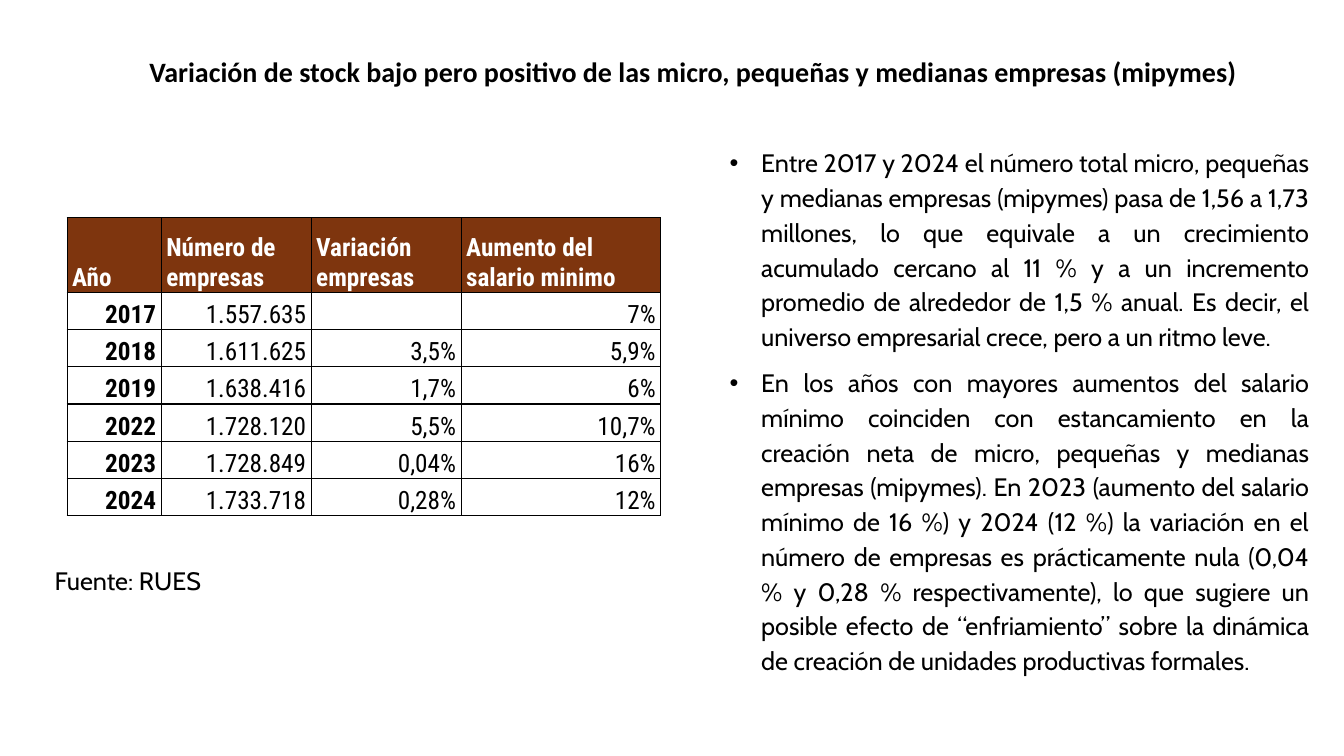
from lxml import etree
from pptx import Presentation
from pptx import util as u
from pptx.dml import color
from pptx.enum import text
from pptx.oxml import ns

# Content
TITLE = "Variación de stock bajo pero positivo de las micro, pequeñas y medianas empresas (mipymes)"
FINDINGS = [
    "Entre 2017 y 2024 el número total micro, pequeñas y medianas empresas (mipymes) pasa de 1,56 a 1,73 "
    "millones, lo que equivale a un crecimiento acumulado cercano al 11 % y a un incremento promedio de "
    "alrededor de 1,5 % anual. Es decir, el universo empresarial crece, pero a un ritmo leve.",
    "En los años con mayores aumentos del salario mínimo coinciden con estancamiento en la creación neta de "
    "micro, pequeñas y medianas empresas (mipymes). En 2023 (aumento del salario mínimo de 16 %) y 2024 "
    "(12 %) la variación en el número de empresas es prácticamente nula (0,04 % y 0,28 % respectivamente), "
    "lo que sugiere un posible efecto de “enfriamiento” sobre la dinámica de creación de unidades "
    "productivas formales.",
]
ROWS = [
    ("Año", "Número de empresas", "Variación empresas", "Aumento del salario minimo"),
    ("2017", "1.557.635", "", "7%"),
    ("2018", "1.611.625", "3,5%", "5,9%"),
    ("2019", "1.638.416", "1,7%", "6%"),
    ("2022", "1.728.120", "5,5%", "10,7%"),
    ("2023", "1.728.849", "0,04%", "16%"),
    ("2024", "1.733.718", "0,28%", "12%"),
]
SOURCE = "Fuente: RUES"

# Formats and layout, in points
BLACK, WHITE, BROWN = "000000", "FFFFFF", "7E350E"
TITLE_FONT = dict(name="Calibri", size=u.Pt(20), bold=True)
BODY_FONT = dict(name="Cabin", size=u.Pt(18), bold=False)
TABLE_FONT = dict(name="Roboto Condensed", size=u.Pt(18))
FINDING_FORMAT = dict(alignment=text.PP_ALIGN.JUSTIFY, line_spacing=1.15,
                      space_before=u.Pt(0), space_after=u.Pt(8))
CELL_FORMAT = dict(vertical_anchor=text.MSO_ANCHOR.BOTTOM, margin_left=u.Pt(3.6),
                   margin_right=u.Pt(3.6), margin_top=0, margin_bottom=0)
TITLE_BOX = (99.4, 0, 828, 104.4)
FINDINGS_BOX = (514, 98.6, 428.4, 404)
SOURCE_BOX = (32, 400.3, 319, 28.8)
TABLE_LEFT, TABLE_TOP = 48, 155.5
COLUMN_WIDTHS = [67.2, 107.1, 107.1, 142.6]
ROW_HEIGHT = 26.64
BULLET_INDENT = 22.5


def rgb(value):
    return color.RGBColor.from_string(value)


def apply(target, values):
    for name, value in values.items():
        setattr(target, name, value)


def place(shape, box):
    apply(shape, dict(zip(("left", "top", "width", "height"), map(u.Pt, box))))


def write(paragraph, words, font, ink=BLACK):
    run = paragraph.add_run()
    run.text = words
    apply(run.font, font)
    run.font.color.rgb = rgb(ink)


def add_borders(cell):
    properties = cell._tc.get_or_add_tcPr()
    for position, side in enumerate(("lnL", "lnR", "lnT", "lnB")):
        line = etree.Element(ns.qn("a:" + side), w=str(u.Pt(1)))
        fill = etree.SubElement(line, ns.qn("a:solidFill"))
        etree.SubElement(fill, ns.qn("a:srgbClr"), val=BLACK)
        properties.insert(position, line)


presentation = Presentation()
presentation.slide_width, presentation.slide_height = u.Pt(960), u.Pt(540)
slide = presentation.slides.add_slide(presentation.slide_layouts[1])

# Title
title = slide.shapes.title
place(title, TITLE_BOX)
title.text_frame.vertical_anchor = text.MSO_ANCHOR.MIDDLE
paragraph = title.text_frame.paragraphs[0]
apply(paragraph, dict(alignment=text.PP_ALIGN.LEFT, line_spacing=0.9))
write(paragraph, TITLE, TITLE_FONT)

# Findings
body = slide.placeholders[1]
place(body, FINDINGS_BOX)
frame = body.text_frame
frame.auto_size = text.MSO_AUTO_SIZE.SHAPE_TO_FIT_TEXT
for index, finding in enumerate(FINDINGS):
    paragraph = frame.add_paragraph() if index else frame.paragraphs[0]
    apply(paragraph, FINDING_FORMAT)
    properties = paragraph._p.get_or_add_pPr()
    properties.set("marL", str(u.Pt(BULLET_INDENT)))
    properties.set("indent", str(-u.Pt(BULLET_INDENT)))
    write(paragraph, finding, BODY_FONT)

# Table: the header row is twice as high as the others
row_heights = [2 * ROW_HEIGHT] + [ROW_HEIGHT] * (len(ROWS) - 1)
table_box = (TABLE_LEFT, TABLE_TOP, sum(COLUMN_WIDTHS), sum(row_heights))
table = slide.shapes.add_table(len(ROWS), len(COLUMN_WIDTHS), *map(u.Pt, table_box)).table
apply(table, dict(first_row=False, horz_banding=False))
for column, width in zip(table.columns, COLUMN_WIDTHS):
    column.width = u.Pt(width)
for row_index, (values, height) in enumerate(zip(ROWS, row_heights)):
    table.rows[row_index].height = u.Pt(height)
    is_header = row_index == 0
    for column_index, value in enumerate(values):
        cell = table.cell(row_index, column_index)
        apply(cell, CELL_FORMAT)
        if is_header:
            cell.fill.solid()
            cell.fill.fore_color.rgb = rgb(BROWN)
        else:
            cell.fill.background()
        add_borders(cell)
        paragraph = cell.text_frame.paragraphs[0]
        paragraph.alignment = text.PP_ALIGN.LEFT if is_header else text.PP_ALIGN.RIGHT
        if value:
            bold = is_header or column_index == 0
            write(paragraph, value, dict(TABLE_FONT, bold=bold), WHITE if is_header else BLACK)

# Source note
note = slide.shapes.add_textbox(*map(u.Pt, SOURCE_BOX))
apply(note.text_frame, dict(word_wrap=True, auto_size=text.MSO_AUTO_SIZE.SHAPE_TO_FIT_TEXT))
write(note.text_frame.paragraphs[0], SOURCE, BODY_FONT)

presentation.save("out.pptx")
